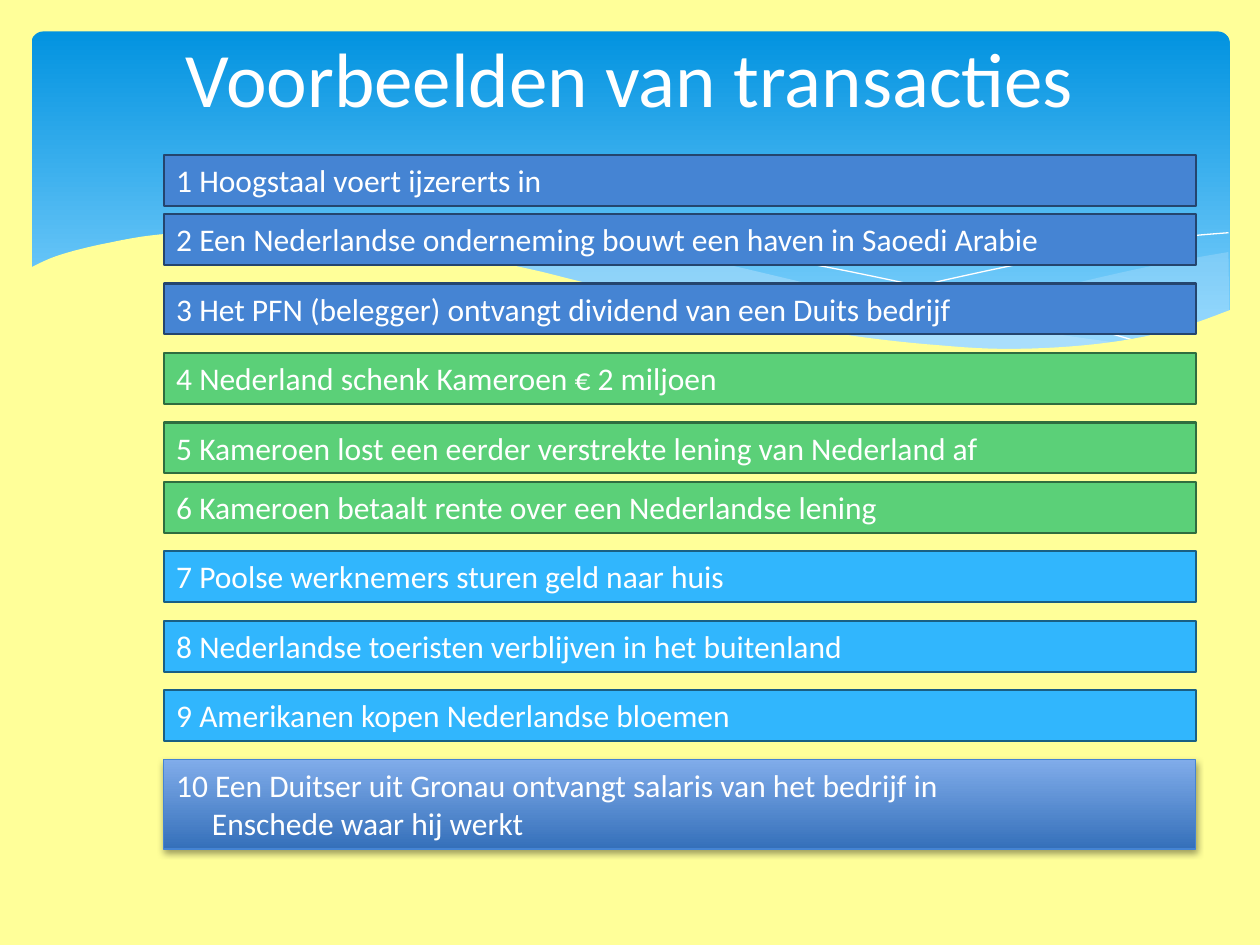
from pptx import Presentation
from pptx.dml.color import RGBColor
from pptx.enum.shapes import MSO_SHAPE as Shape
from pptx.enum.text import MSO_ANCHOR as Anchor, MSO_AUTO_SIZE as AutoSize, PP_ALIGN as Align
from pptx.oxml import parse_xml
from pptx.oxml.ns import nsdecls, qn
from pptx.util import Pt
from lxml.etree import SubElement

COLORS = {
    "paper": "FFFF99", "white": "FFFFFF", "mist": "C6E7FC",
    "sky_top": "0293E0", "sky_bottom": "83D3FE",
    "blue": "4584D3", "blue_edge": "24456E",
    "green": "5BD078", "green_edge": "2F6D3F",
    "cyan": "31B6FD", "cyan_edge": "195F84",
    "last_top": "80ACEA", "last_bottom": "3570BA", "black": "000000",
}

# Wave edges as knots in points; smooth curves run through them.
RIGHT_CREST = [(702, 144), (663, 151), (620, 160.5), (561, 175), (508, 185), (476, 191)]
RIGHT_BASE = [(476, 191), (508, 195), (545, 198.7), (586, 200), (628, 197.3),
              (663, 191), (683, 185), (702.5, 178)]
MID_CREST = [(643, 196.5), (602.6, 190.8), (558, 183), (508, 173), (453, 160), (410, 150),
             (370, 142.5), (334, 137.5), (302, 134.6), (260, 134), (206, 137.5)]
MID_BASE = [(206, 137.5), (246, 143), (291, 152), (323, 160), (382, 173), (433, 183.5),
            (479, 191.5), (520, 197), (557, 200), (589, 201), (624, 199.5), (643, 196.5)]
FALLING_LINE = [(222.5, 140.4), (247, 136.8), (279, 134.8), (312, 134.6), (352, 136.8),
                (400, 142), (458, 150), (523, 163), (572, 174), (625, 188), (653, 196)]
RISING_LINE = [(441, 185), (484, 174), (538, 160.5), (602, 147), (644.4, 139.7),
               (675, 135.4), (702, 133)]
SHORE = [(703.5, 177), (677, 186.5), (647, 193.7), (612, 198), (573, 199.4), (536, 197.3),
         (495, 193), (451, 186), (399, 176), (342, 163.4), (301, 153.4), (244, 141.8),
         (195, 135.4), (152, 132.5), (116, 132.5), (86, 134.6), (61, 139), (42.5, 143.3),
         (29, 147.6), (16.6, 153.4)]
SHORE_FOOT = [(16.6, 236.9), (703.5, 236.9)]

TRANSACTIONS = [
    ("blue", "1 Hoogstaal voert ijzererts in"),
    ("blue", "2 Een Nederlandse onderneming bouwt een haven in Saoedi Arabie"),
    ("blue", "3 Het PFN (belegger) ontvangt dividend van een Duits bedrijf"),
    ("green", "4 Nederland schenk Kameroen € 2 miljoen"),
    ("green", "5 Kameroen lost een eerder verstrekte lening van Nederland af"),
    ("green", "6 Kameroen betaalt rente over een Nederlandse lening"),
    ("cyan", "7 Poolse werknemers sturen geld naar huis"),
    ("cyan", "8 Nederlandse toeristen verblijven in het buitenland"),
    ("cyan", "9 Amerikanen kopen Nederlandse bloemen"),
]
LAST_TRANSACTION = ["10 Een Duitser uit Gronau ontvangt salaris van het bedrijf in",
                    "Enschede waar hij werkt"]
ROW_LEFT, ROW_WIDTH, ROW_HEIGHT, FIRST_TOP = 93.6, 589.7, 29.1, 88.4
PITCH, TIGHT_PITCH = 39.7, 33.9
TIGHT_AFTER = (0, 4)


def rgb(name):
    return RGBColor.from_string(COLORS[name])


def smooth(knots, steps=5):
    """Sample a Catmull-Rom curve through the knots."""
    padded = [knots[0], *knots, knots[-1]]
    curve = []
    for a, b, c, d in zip(padded, padded[1:], padded[2:], padded[3:]):
        for t in (step / steps for step in range(steps)):
            curve.append(tuple(
                q + t * (r - p) / 2 + t**2 * (2 * p - 5 * q + 4 * r - s) / 2
                + t**3 * (3 * q - p - 3 * r + s) / 2
                for p, q, r, s in zip(a, b, c, d)))
    return curve + [knots[-1]]


class SlideBuilder:
    font, title_size, row_size = "Calibri", 44, 18

    def __init__(self, slide):
        self.slide = slide
        slide.background.fill.solid()
        slide.background.fill.fore_color.rgb = rgb("paper")

    def add_text(self, paragraph, text, size):
        run = paragraph.add_run()
        run.text = text
        run.font.name, run.font.size = self.font, Pt(size)
        run.font.color.rgb = rgb("white")

    def gradient(self, shape, *stops):
        """Fill from top to bottom with (position, colour) stops."""
        shape.fill.gradient()
        shape.fill.gradient_angle = 270
        for stop, (position, color) in zip(shape.fill.gradient_stops, stops):
            stop.position, stop.color.rgb = position, rgb(color)

    def sky(self):
        panel = self.slide.shapes.add_shape(
            Shape.ROUNDED_RECTANGLE, Pt(18), Pt(18), Pt(684.7), Pt(194.4))
        panel.adjustments[0] = 0.034
        panel.shadow.inherit = False
        panel.line.fill.background()
        self.gradient(panel, (0, "sky_top"), (0.9, "sky_bottom"))

    def outline(self, points, closed):
        (x, y), *rest = [(Pt(x), Pt(y)) for x, y in points]
        builder = self.slide.shapes.build_freeform(x, y)
        builder.add_line_segments(rest, close=closed)
        shape = builder.convert_to_shape()
        shape.shadow.inherit = False
        return shape

    def wave(self, points, color, opacity=100):
        wave = self.outline(points, True)
        wave.line.fill.background()
        wave.fill.solid()
        wave.fill.fore_color.rgb = rgb(color)
        if opacity < 100:
            tint = wave.element.spPr.find(f"{qn('a:solidFill')}/{qn('a:srgbClr')}")
            SubElement(tint, qn("a:alpha")).set("val", str(opacity * 1000))

    def hairline(self, points):
        hairline = self.outline(points, False)
        hairline.fill.background()
        hairline.line.color.rgb = rgb("white")
        hairline.line.width = Pt(0)

    def title(self, text):
        title = self.slide.shapes.title
        self.slide.shapes.element.append(title.element)  # in front of the waves
        title.left, title.top, title.width, title.height = Pt(36), Pt(21), Pt(648), Pt(45.4)
        title.text_frame.vertical_anchor = Anchor.MIDDLE
        heading = title.text_frame.paragraphs[0]
        heading.alignment = Align.CENTER
        self.add_text(heading, text, self.title_size)

    def row(self, top, lines, edge, edge_width, height=ROW_HEIGHT):
        row = self.slide.shapes.add_shape(
            Shape.RECTANGLE, Pt(ROW_LEFT), Pt(top), Pt(ROW_WIDTH), Pt(height))
        row.shadow.inherit = False
        row.line.color.rgb, row.line.width = rgb(edge), Pt(edge_width)
        frame = row.text_frame
        frame.word_wrap, frame.auto_size = True, AutoSize.SHAPE_TO_FIT_TEXT
        frame.vertical_anchor = Anchor.TOP
        for index, line in enumerate(lines):
            paragraph = frame.add_paragraph() if index else frame.paragraphs[0]
            paragraph.alignment = Align.LEFT
            if index:
                paragraph._p.get_or_add_pPr().set("marL", str(Pt(20.4)))
            self.add_text(paragraph, line, self.row_size)
        return row

    def plain_row(self, top, text, color):
        row = self.row(top, [text], f"{color}_edge", 1.25)
        row.fill.solid()
        row.fill.fore_color.rgb = rgb(color)

    def raised_row(self, top, lines):
        row = self.row(top, lines, "blue", 0.75, 51)
        self.gradient(row, (0, "last_top"), (1, "last_bottom"))
        effects = row.element.spPr.find(qn("a:effectLst"))
        effects.append(parse_xml(
            f'<a:outerShdw {nsdecls("a")} blurRad="{Pt(4)}" dist="{Pt(2)}" dir="5400000" '
            f'rotWithShape="0"><a:srgbClr val="{COLORS["black"]}"><a:alpha val="38000"/>'
            '</a:srgbClr></a:outerShdw>'))


def main():
    deck = Presentation()
    deck.slide_width, deck.slide_height = Pt(720), Pt(540)
    builder = SlideBuilder(deck.slides.add_slide(deck.slide_layouts[5]))

    builder.sky()
    builder.wave(smooth(RIGHT_CREST) + smooth(RIGHT_BASE), "mist", 29)
    builder.wave(smooth(MID_CREST) + smooth(MID_BASE), "mist", 40)
    builder.hairline(smooth(FALLING_LINE))
    builder.hairline(smooth(RISING_LINE))
    builder.wave(smooth(SHORE) + SHORE_FOOT, "paper")
    builder.title("Voorbeelden van transacties")

    top = FIRST_TOP
    for index, (color, text) in enumerate(TRANSACTIONS):
        builder.plain_row(top, text, color)
        top += TIGHT_PITCH if index in TIGHT_AFTER else PITCH
    builder.raised_row(top, LAST_TRANSACTION)

    deck.save("out.pptx")


if __name__ == "__main__":
    main()
